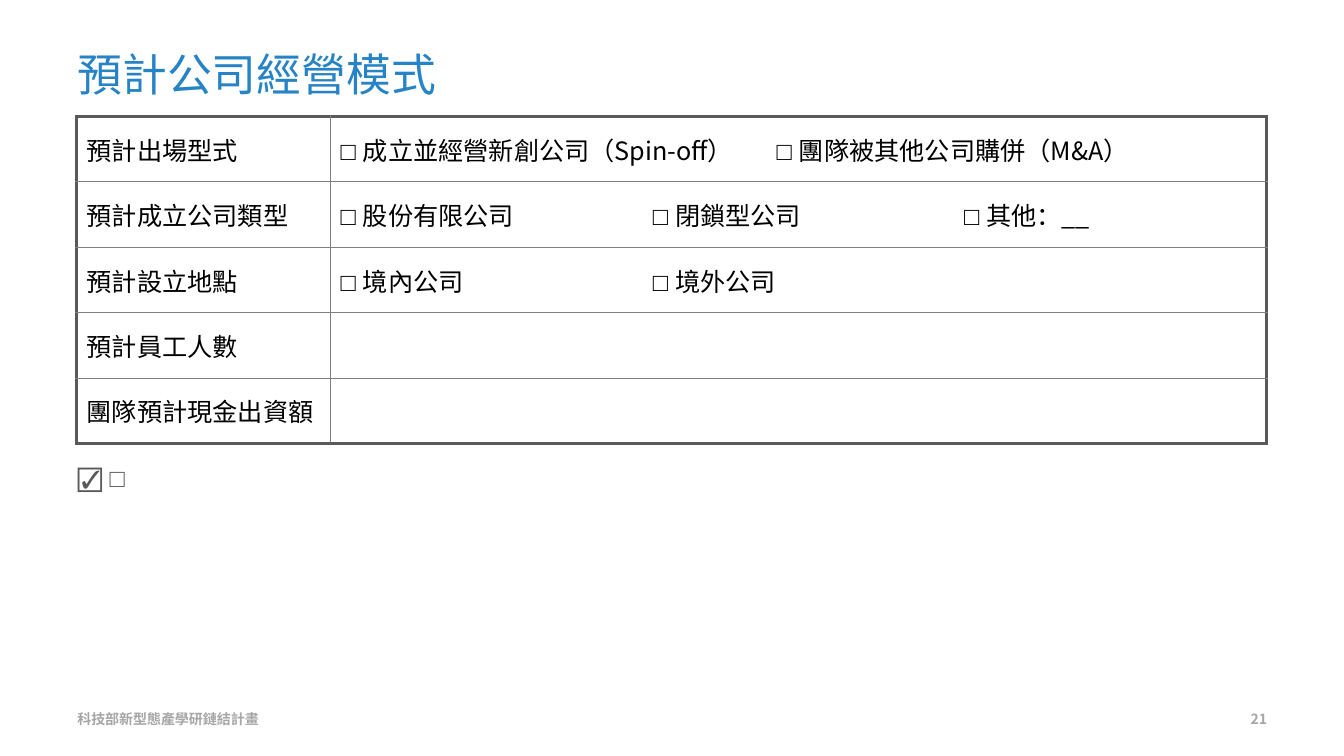
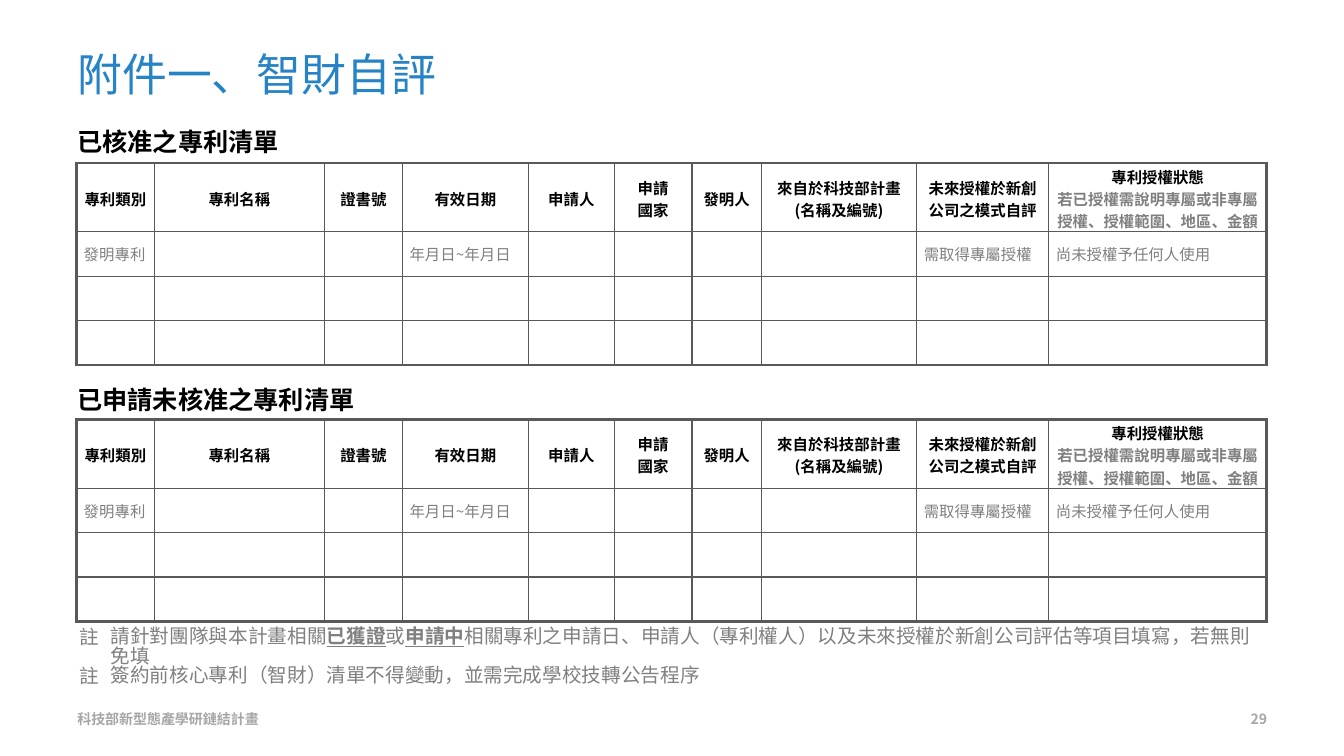
import pptx
import pptx.dml.color
import pptx.enum.text
import pptx.oxml.ns
import pptx.util
from lxml import etree

Cm = pptx.util.Cm
Pt = pptx.util.Pt
RGBColor = pptx.dml.color.RGBColor
ALIGN = pptx.enum.text.PP_ALIGN
MIDDLE = pptx.enum.text.MSO_ANCHOR.MIDDLE
qn = pptx.oxml.ns.qn

BLUE = RGBColor(0x26, 0x83, 0xC6)
BLACK = RGBColor(0x00, 0x00, 0x00)
DARK = RGBColor(0x59, 0x59, 0x59)
GRAY = RGBColor(0x80, 0x80, 0x80)
PALE = RGBColor(0xA6, 0xA6, 0xA6)
SANS = "Noto Sans CJK SC"
SANS_TC = "Noto Sans CJK TC"
SYMBOL = "Arial"


def write(para, text, size=18, color=BLACK, font=SANS, bold=False,
          underline=False, align=ALIGN.LEFT):
    para.alignment = align
    span = para.add_run()
    span.text = text
    span.font.size = Pt(size)
    span.font.bold = bold
    span.font.underline = underline
    span.font.color.rgb = color
    span.font.name = font
    latin = span.font._element.find(qn("a:latin"))
    east_asian = etree.Element(qn("a:ea"), typeface=font)
    latin.addnext(east_asian)


def draw_grid(table, inner_color, inner_edges):
    row_count, column_count = len(table.rows), len(table.columns)
    table.first_row = False
    table.horz_banding = False
    for row in range(row_count):
        for column in range(column_count):
            cell = table.cell(row, column)
            cell.vertical_anchor = MIDDLE
            reach = column + (cell.span_width if cell.is_merge_origin else 1)
            sides = (("a:lnL", column, column_count, inner_edges),
                     ("a:lnR", reach, column_count, inner_edges),
                     ("a:lnT", row, row_count, range(row_count)),
                     ("a:lnB", row + 1, row_count, range(row_count)))
            properties = cell._tc.get_or_add_tcPr()
            for tag, edge, last, visible in sides:
                outer = edge in (0, last)
                width = Pt(2.25) if outer else Pt(1)
                line = etree.SubElement(properties, qn(tag), w=str(int(width)))
                if outer or edge in visible:
                    fill = etree.SubElement(line, qn("a:solidFill"))
                    color = DARK if outer else inner_color
                    etree.SubElement(fill, qn("a:srgbClr"), val=str(color))
                else:
                    etree.SubElement(line, qn("a:noFill"))
            cell.fill.background()


deck = pptx.Presentation()
deck.slide_width = Cm(33.87)
deck.slide_height = Cm(19.05)

pages = []
for heading, number in (("預計公司經營模式", "21"), ("附件一、智財自評", "29")):
    page = deck.slides.add_slide(deck.slide_layouts[5])
    pages.append(page)
    title = page.shapes.title
    title.left, title.top = Cm(1.7), Cm(0.76)
    title.width, title.height = Cm(30.48), Cm(2.18)
    title.text_frame.vertical_anchor = MIDDLE
    write(title.text_frame.paragraphs[0], heading, size=32, color=BLUE)
    for left, text, align in ((1.7, "科技部新型態產學研鏈結計畫", ALIGN.LEFT),
                              (24.28, number, ALIGN.RIGHT)):
        box = page.shapes.add_textbox(Cm(left), Cm(17.6), Cm(7.9), Cm(1.02))
        box.text_frame.word_wrap = True
        box.text_frame.vertical_anchor = MIDDLE
        write(box.text_frame.paragraphs[0], text, size=10, color=PALE,
              bold=True, align=align)

business_page, patent_page = pages

business_rows = (
    ("預計出場型式", ((1, 2, "成立並經營新創公司（Spin-off）"),
                (3, 4, "團隊被其他公司購併（M&A）"))),
    ("預計成立公司類型", ((1, 1, "股份有限公司"), (2, 3, "閉鎖型公司"),
                  (4, 4, "其他：__"))),
    ("預計設立地點", ((1, 1, "境內公司"), (2, 4, "境外公司"))),
    ("預計員工人數", ((1, 4, ""),)),
    ("團隊預計現金出資額", ((1, 4, ""),)),
)
business_widths = (6.4, 7.87, 3.12, 4.72, 7.87)
table = business_page.shapes.add_table(
    len(business_rows), len(business_widths),
    Cm(1.93), Cm(2.93), Cm(29.98), Cm(8.25)).table
for column, width in zip(table.columns, business_widths):
    column.width = Cm(width)
for row, (label, options) in enumerate(business_rows):
    table.rows[row].height = Cm(1.65)
    write(table.cell(row, 0).text_frame.paragraphs[0], label, font=SANS_TC)
    for first, last, option in options:
        cell = table.cell(row, first)
        if last > first:
            cell.merge(table.cell(row, last))
        if option:
            para = cell.text_frame.paragraphs[0]
            write(para, "□ ", font=SYMBOL)
            write(para, option, font=SANS_TC)
draw_grid(table, GRAY, (1,))

box = business_page.shapes.add_textbox(Cm(1.7), Cm(11.53), Cm(2.29), Cm(1.02))
write(box.text_frame.paragraphs[0], "☑ □", color=DARK, font=SYMBOL)

patent_columns = (
    (1.96, ("專利類別",), "發明專利"),
    (4.29, ("專利名稱",), ""),
    (1.96, ("證書號",), ""),
    (3.18, ("有效日期",), "年月日~年月日"),
    (2.16, ("申請人",), ""),
    (1.96, ("申請", "國家"), ""),
    (1.75, ("發明人",), ""),
    (3.91, ("來自於科技部計畫", "(名稱及編號)"), ""),
    (3.33, ("未來授權於新創公司之模式自評",), "需取得專屬授權"),
    (5.49, ("專利授權狀態", "若已授權需說明專屬或非專屬授權、授權範圍、地區、金額"),
     "尚未授權予任何人使用"),
)
patent_heights = (1.73, 1.12, 1.12, 1.12)
for heading, heading_top, table_top in (("已核准之專利清單", 2.84, 4.11),
                                        ("已申請未核准之專利清單", 9.32, 10.57)):
    box = patent_page.shapes.add_textbox(
        Cm(1.7), Cm(heading_top), Cm(29.85), Cm(1.27))
    box.text_frame.word_wrap = True
    para = box.text_frame.paragraphs[0]
    write(para, heading, bold=True, align=ALIGN.JUSTIFY)
    para.line_spacing = 1.3

    table = patent_page.shapes.add_table(
        len(patent_heights), len(patent_columns),
        Cm(1.93), Cm(table_top), Cm(29.99), Cm(5.09)).table
    for row, height in zip(table.rows, patent_heights):
        row.height = Cm(height)
    for cell in table.iter_cells():
        cell.margin_left = cell.margin_right = Cm(0.18)
        cell.margin_top = cell.margin_bottom = Cm(0.1)
    for index, (width, labels, example) in enumerate(patent_columns):
        table.columns[index].width = Cm(width)
        header = table.cell(0, index)
        header.margin_top, header.margin_bottom = Cm(0.05), Cm(0)
        for line, label in enumerate(labels):
            frame = header.text_frame
            para = frame.add_paragraph() if line else frame.paragraphs[0]
            color = GRAY if label.startswith("若已授權") else BLACK
            write(para, label, size=11, color=color, bold=True,
                  align=ALIGN.CENTER)
        if example:
            write(table.cell(1, index).text_frame.paragraphs[0], example,
                  size=11, color=GRAY)
    draw_grid(table, DARK, range(len(patent_columns)))

notes = (
    (("請針對團隊與本計畫相關", False), ("已獲證", True), ("或", False), ("申請中", True),
     ("相關專利之申請日、申請人（專利權人）以及未來授權於新創公司評估等項目填寫，若無則免填", False)),
    (("簽約前核心專利（智財）清單不得變動，並需完成學校技轉公告程序", False),),
)
box = patent_page.shapes.add_textbox(Cm(1.75), Cm(15.7), Cm(30.2), Cm(2.06))
frame = box.text_frame
frame.word_wrap = True
for index, note in enumerate(notes):
    para = frame.add_paragraph() if index else frame.paragraphs[0]
    para.line_spacing = 0.83
    properties = para._p.get_or_add_pPr()
    properties.set("marL", str(int(Cm(0.79))))
    properties.set("indent", str(int(Cm(-0.79))))
    etree.SubElement(properties, qn("a:buFont"), typeface=SANS)
    etree.SubElement(properties, qn("a:buChar"), char="註")
    for text, strong in note:
        write(para, text, size=14, color=GRAY, bold=strong, underline=strong)

deck.save("out.pptx")
